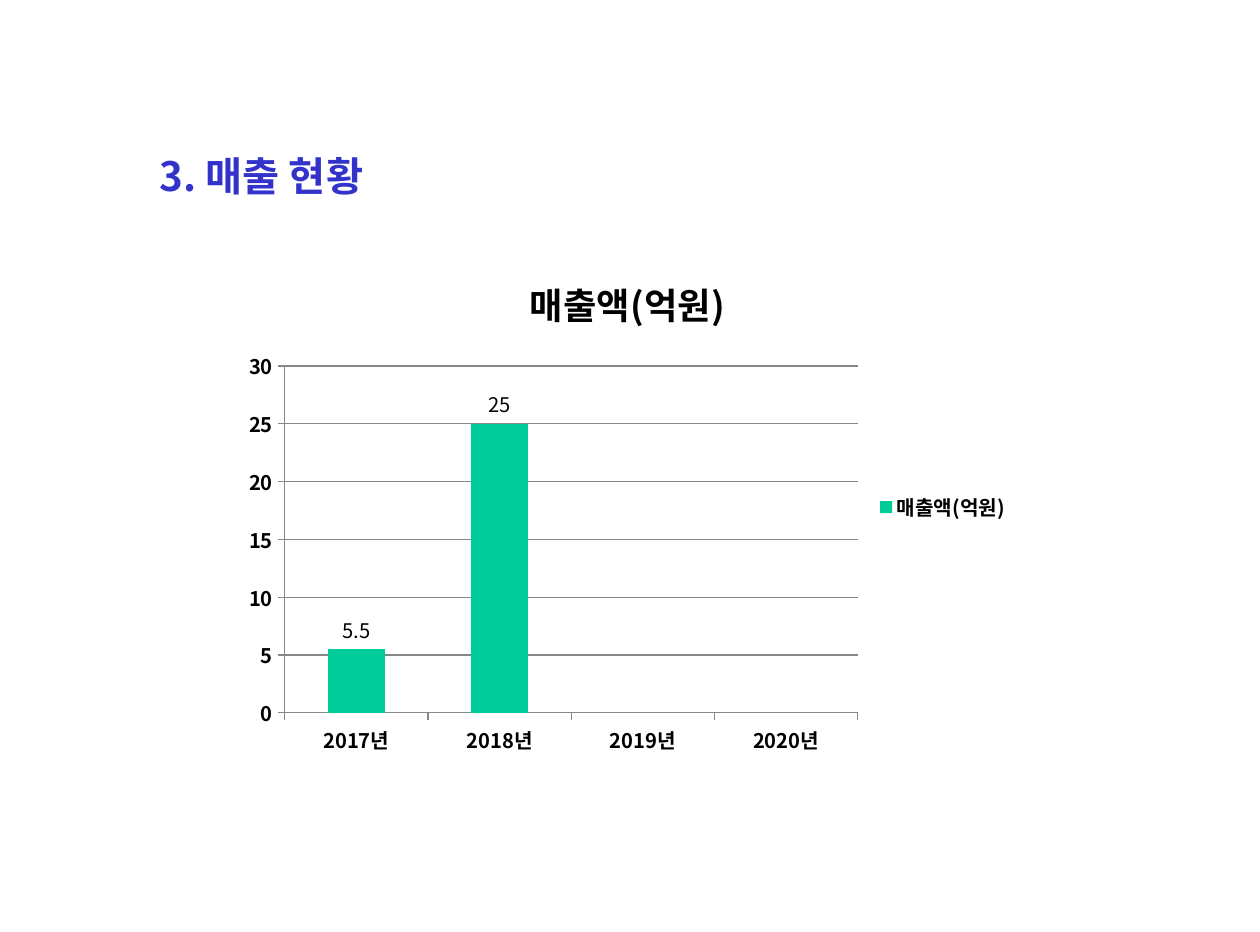
from dataclasses import dataclass

from lxml import etree
from pptx import Presentation
from pptx.chart.data import CategoryChartData
from pptx.dml.color import RGBColor
from pptx.enum import chart as ch, text
from pptx.oxml.ns import qn
from pptx.util import Cm, Pt

TITLE = "3. 매출 현황"
SERIES = "매출액(억원)"
SALES = {"2017년": 5.5, "2018년": 25, "2019년": None, "2020년": None}
SLIDE_SIZE = Cm(26.47), Cm(19.58)
TITLE_BOX = Cm(3.1), Cm(3.05), Cm(11.43), Cm(1.27)
CHART_BOX = Cm(4.9), Cm(5.23), Cm(16.56), Cm(10.85)


@dataclass(frozen=True)
class Theme:
    font: str = "Noto Sans CJK KR"
    title: str = "3333CC"
    ink: str = "000000"
    bar: str = "00CC99"
    line: str = "868686"
    title_size: float = 24
    chart_title_size: float = 21.6
    label_size: float = 12


THEME = Theme()


def style(font, size, color=THEME.ink, bold=True):
    font.name = THEME.font
    font.size = Pt(size)
    font.bold = bold
    font.color.rgb = RGBColor.from_string(color)


def set_east_asian(root):
    for latin in root.iter(qn("a:latin")):
        latin.addnext(etree.Element(qn("a:ea"), typeface=THEME.font))


def style_line(line):
    line.color.rgb = RGBColor.from_string(THEME.line)
    line.width = Pt(0.75)


def add_title(s):
    sp = s.shapes.title
    sp.left, sp.top, sp.width, sp.height = TITLE_BOX
    tf = sp.text_frame
    tf.text = TITLE
    tf.word_wrap = True
    tf.auto_size = text.MSO_AUTO_SIZE.NONE
    tf.vertical_anchor = text.MSO_ANCHOR.MIDDLE
    p = tf.paragraphs[0]
    p.alignment = text.PP_ALIGN.LEFT
    style(p.font, THEME.title_size, THEME.title)
    set_east_asian(sp.element)


def add_sales_chart(s):
    data = CategoryChartData()
    data.categories = list(SALES)
    data.add_series(SERIES, list(SALES.values()))
    chart = s.shapes.add_chart(
        ch.XL_CHART_TYPE.COLUMN_CLUSTERED, *CHART_BOX, data
    ).chart
    style(chart.font, THEME.label_size)

    chart.has_title = True
    tf = chart.chart_title.text_frame
    tf.text = SERIES
    style(tf.paragraphs[0].font, THEME.chart_title_size)

    chart.has_legend = True
    chart.legend.position = ch.XL_LEGEND_POSITION.RIGHT
    chart.legend.include_in_layout = False
    style(chart.legend.font, THEME.label_size)

    value_axis = chart.value_axis
    for axis in (chart.category_axis, value_axis):
        axis.major_tick_mark = ch.XL_TICK_MARK.OUTSIDE
        axis.minor_tick_mark = ch.XL_TICK_MARK.NONE
        style(axis.tick_labels.font, THEME.label_size)
        style_line(axis.format.line)
    value_axis.minimum_scale, value_axis.maximum_scale = 0, 30
    value_axis.major_unit = 5
    value_axis.has_major_gridlines = True
    style_line(value_axis.major_gridlines.format.line)

    plot = chart.plots[0]
    plot.gap_width = 150
    plot.vary_by_categories = False
    series = plot.series[0]
    series.format.fill.solid()
    series.format.fill.fore_color.rgb = RGBColor.from_string(THEME.bar)
    labels = series.data_labels
    labels.show_value = True
    labels.position = ch.XL_LABEL_POSITION.OUTSIDE_END
    style(labels.font, THEME.label_size, bold=False)
    set_east_asian(chart.element)


def main():
    prs = Presentation()
    prs.slide_width, prs.slide_height = SLIDE_SIZE
    s = prs.slides.add_slide(prs.slide_layouts[5])
    add_title(s)
    add_sales_chart(s)
    prs.save("out.pptx")


if __name__ == "__main__":
    main()
